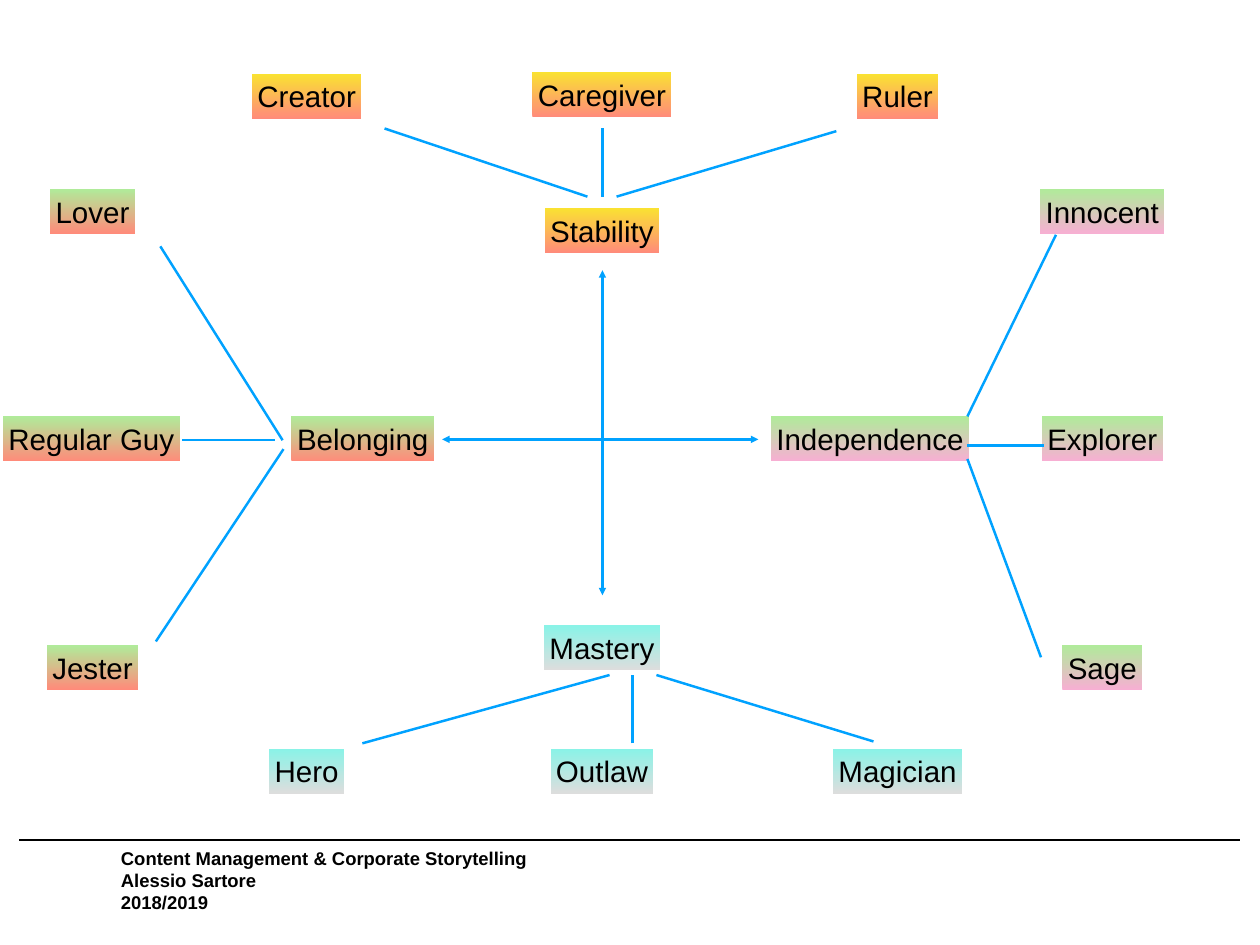
from lxml.etree import SubElement
from pptx import Presentation
from pptx.dml.color import RGBColor
from pptx.enum.shapes import MSO_CONNECTOR, MSO_SHAPE
from pptx.enum.text import MSO_ANCHOR, MSO_AUTO_SIZE, PP_ALIGN
from pptx.oxml.ns import qn
from pptx.util import Pt

# Content: each drive has (bottom, top) colours and labels as (text, centre x, top, width)
DRIVES = [
    (("FF8B7A", "FAE232"), [
        ("Stability", 489.2, 169.2, 93), ("Creator", 249.2, 59.8, 89.3),
        ("Caregiver", 489.2, 58.3, 113), ("Ruler", 729.4, 59.8, 66.2)]),
    (("F7AFD3", "B0EB9A"), [
        ("Independence", 707, 338.4, 161.3), ("Innocent", 895.8, 153.4, 100.8),
        ("Explorer", 895.8, 338.4, 98.6), ("Sage", 895.8, 524.2, 64.8)]),
    (("DDDDDD", "8AF3E7"), [
        ("Mastery", 489.2, 508.3, 94.3), ("Hero", 249.2, 608.4, 61.2),
        ("Outlaw", 489.2, 608.4, 83.5), ("Magician", 729.4, 608.4, 105)]),
    (("FF8B7A", "B0EB9A"), [
        ("Belonging", 294.8, 338.4, 116), ("Lover", 75.2, 153.4, 69.1),
        ("Regular Guy", 74.2, 338.4, 144), ("Jester", 75.2, 524.2, 74.2)]),
]
# Lines as (x1, y1, x2, y2)
AXIS_ARROWS = [
    (489.6, 357.1, 489.6, 219.6), (489.6, 312.5, 489.6, 483.8),
    (490.3, 357.1, 616.3, 357.1), (502.6, 357.1, 359.3, 357.1),
]
SPOKES = [
    (229.7, 357.8, 130.3, 200.2), (148.3, 357.8, 223.2, 357.8), (126.7, 521.3, 230.4, 365),
    (786.2, 338.4, 858.2, 190.8), (786.2, 362.2, 848.2, 362.2), (786.2, 373, 846, 534.2),
    (294.5, 604.1, 495.4, 548.6), (514.1, 604.1, 514.1, 548.6), (709.9, 602.6, 533.5, 548.6),
    (489.6, 159.8, 489.6, 104.4), (477.4, 159.8, 312.5, 104.4), (679.7, 106.6, 501.1, 159.8),
]
FOOTER = "Content Management & Corporate Storytelling\vAlessio Sartore\v2018/2019"
FOOTER_RULE = (15.8, 682.6, 1008, 682.6)
LABEL_HEIGHT = 36.6
INSET = 4


def color(hex_string):
    return RGBColor.from_string(hex_string)


def add_line(ends, hex_string, arrow=False):
    line = slide.shapes.add_connector(MSO_CONNECTOR.STRAIGHT, *map(Pt, ends))
    line.line.color.rgb = color(hex_string)
    line.line.width = Pt(2)
    if arrow:
        SubElement(line.line._get_or_add_ln(), qn("a:tailEnd"), type="triangle")
    SubElement(line._element.spPr, qn("a:effectLst"))


def set_text(holder, text, size, align, bold=False):
    frame = holder.text_frame
    frame.text = text
    frame.word_wrap = False
    frame.auto_size = MSO_AUTO_SIZE.SHAPE_TO_FIT_TEXT
    frame.vertical_anchor = MSO_ANCHOR.MIDDLE
    frame.margin_left = frame.margin_right = Pt(INSET)
    frame.margin_top = frame.margin_bottom = Pt(INSET)
    paragraph = frame.paragraphs[0]
    paragraph.alignment = align
    for run in paragraph.runs:
        run.font.name = "Arial"
        run.font.size = Pt(size)
        run.font.bold = bold
        run.font.color.rgb = color("000000")


def add_label(text, center, top, width, gradient):
    label = slide.shapes.add_shape(MSO_SHAPE.RECTANGLE, Pt(center - width / 2), Pt(top),
                                   Pt(width), Pt(LABEL_HEIGHT))
    label.shadow.inherit = False
    label.line.fill.background()
    label.fill.gradient()
    label.fill.gradient_angle = 90
    for stop, hex_string in zip(label.fill.gradient_stops, gradient):
        stop.color.rgb = color(hex_string)
    set_text(label, text, 24, PP_ALIGN.CENTER)


presentation = Presentation()
presentation.slide_width, presentation.slide_height = Pt(1024), Pt(768)
slide = presentation.slides.add_slide(presentation.slide_layouts[6])

# Footer
footer = slide.shapes.add_textbox(Pt(94.3), Pt(684), Pt(341.3), Pt(62))
set_text(footer, FOOTER, 15, PP_ALIGN.LEFT, bold=True)
add_line(FOOTER_RULE, "000000")

# Axes between the four drives
for arrow_ends in AXIS_ARROWS:
    add_line(arrow_ends, "00A2FF", arrow=True)

# Drives and their archetypes
for gradient, labels in DRIVES:
    for label_row in labels:
        add_label(*label_row, gradient)

# Spokes from drives to archetypes
for spoke in SPOKES:
    add_line(spoke, "00A2FF")

presentation.save("out.pptx")
